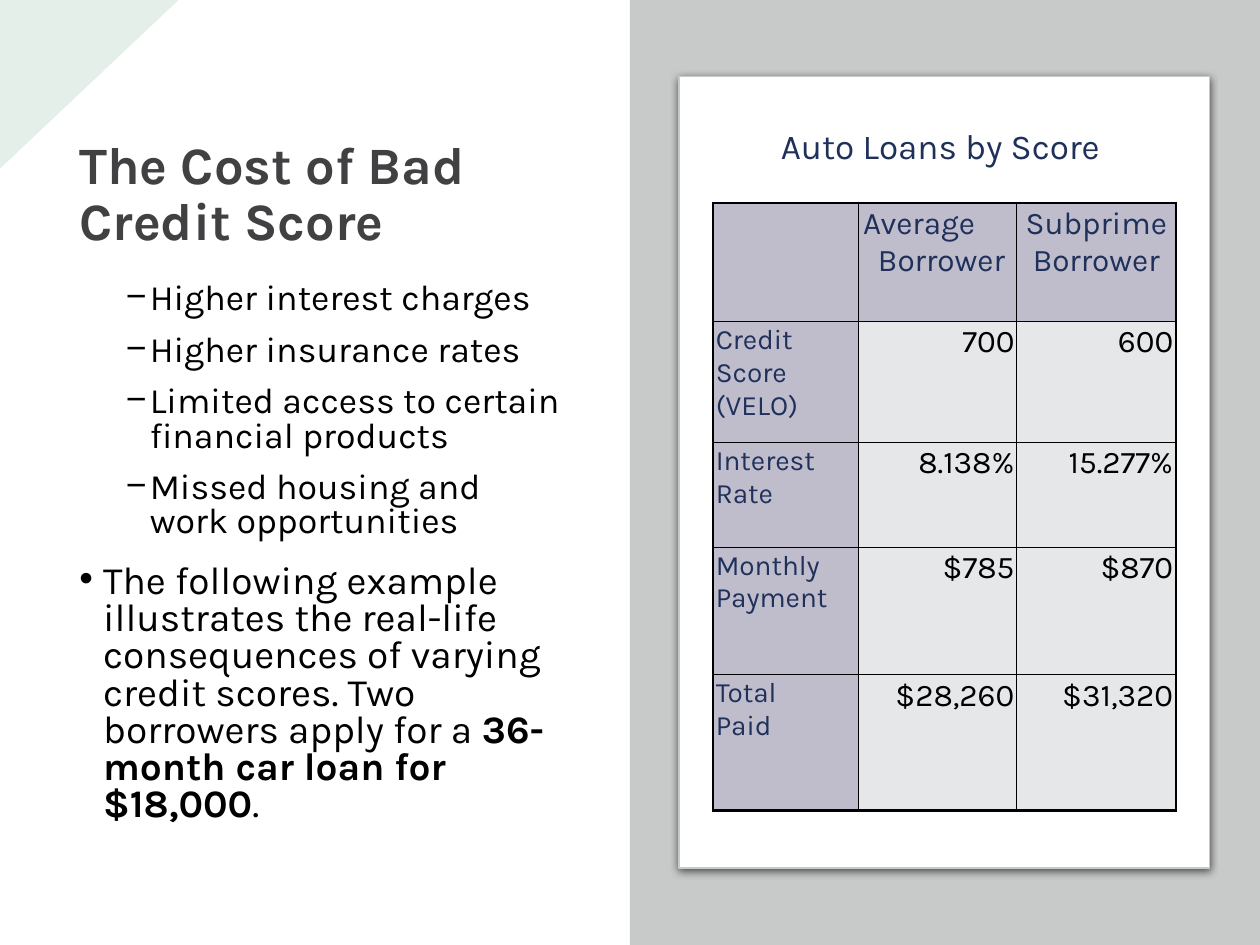
"""Build the slide on the cost of a bad credit score."""
import pptx
import pptx.util
import pptx.dml.color
import pptx.enum.shapes
import pptx.enum.text
import pptx.oxml
import pptx.oxml.ns

Cm, Pt = pptx.util.Cm, pptx.util.Pt
KIND = pptx.enum.shapes.MSO_SHAPE
SIDE = pptx.enum.text.PP_ALIGN
SPACE = pptx.oxml.ns.nsdecls("a")
NAVY, BLACK, GREY, LILAC, PALE = "1F305B", "000000", "C8CACA", "BFBDCB", "E6E7E8"

TITLE = "The Cost of Bad Credit Score"
COSTS = [
    "Higher interest charges",
    "Higher insurance rates",
    "Limited access to certain financial products",
    "Missed housing and work opportunities",
]
CASE = [
    ("The following example illustrates the real-life consequences of varying "
     "credit scores. Two borrowers apply for a ", False),
    ("36-month car loan for $18,000", True),
    (".", False),
]
LOANS = "Auto Loans by Score"
ROWS = [
    ("", "Average\nBorrower", "Subprime\nBorrower"),
    ("Credit Score (VELO)", "700", "600"),
    ("Interest Rate", "8.138%", "15.277%"),
    ("Monthly Payment", "$785", "$870"),
    ("Total\nPaid", "$28,260", "$31,320"),
]
WIDE = [2.92, 3.2, 3.2]
HIGH = [2.39, 2.44, 2.11, 2.57, 2.74]


def color(code):
    return pptx.dml.color.RGBColor.from_string(code)


def node(xml):
    return pptx.oxml.parse_xml(xml)


def write(para, text, size, code, bold=False):
    run = para.add_run()
    run.text = text
    font = run.font
    font.name, font.size, font.bold = "Karla", Pt(size), bold
    font.color.rgb = color(code)


def shape(kind, box, code):
    item = slide.shapes.add_shape(kind, *map(Cm, box))
    item.shadow.inherit = False
    item.fill.solid()
    item.fill.fore_color.rgb = color(code)
    item.line.fill.background()
    return item


def frame(box, wrap=True):
    text = slide.shapes.add_textbox(*map(Cm, box)).text_frame
    text.word_wrap = wrap
    return text


def bullet(para, mark, left, before):
    para.line_spacing = 0.8
    para.space_before, para.space_after = Pt(before), Pt(6)
    props = para._p.get_or_add_pPr()
    props.set("marL", str(Cm(left)))
    props.set("indent", str(Cm(-0.48)))
    props.append(node(f'<a:buFont {SPACE} typeface="Arial"/>'))
    props.append(node(f'<a:buChar {SPACE} char="{mark}"/>'))


def border(cell, row, col):
    edges = {"L": col == 0, "R": col == len(WIDE) - 1,
             "T": row == 0, "B": row == len(HIGH) - 1}
    props = cell._tc.get_or_add_tcPr()
    for edge, outer in edges.items():
        width = Pt(1.5 if outer else 0.75)
        props.append(node(
            f'<a:ln{edge} {SPACE} w="{width}"><a:solidFill>'
            f'<a:srgbClr val="{BLACK}"/></a:solidFill></a:ln{edge}>'))


def fill(cell, text, row, col):
    head = row == 0 or col == 0
    border(cell, row, col)
    cell.fill.solid()
    cell.fill.fore_color.rgb = color(LILAC if head else PALE)
    cell.margin_left = cell.margin_right = Cm(0.05)
    cell.margin_top = cell.margin_bottom = Cm(0.05)
    for spot, line in enumerate(text.split("\n") if text else []):
        body = cell.text_frame
        para = body.add_paragraph() if spot else body.paragraphs[0]
        para.alignment = (SIDE.LEFT if col == 0 or line == "Average"
                          else SIDE.CENTER if row == 0 else SIDE.RIGHT)
        if (row, col) == (0, 1):
            shift = Cm(0.16 if spot else 0.05)
            para._p.get_or_add_pPr().set("marL", str(shift))
        write(para, line, 18 if col else 16, NAVY if head else BLACK)


deck = pptx.Presentation()
deck.slide_width, deck.slide_height = Cm(25.4), Cm(19.05)
slide = deck.slides.add_slide(deck.slide_layouts[6])

corner = shape(KIND.RIGHT_TRIANGLE, (0.1, -0.1, 3.4, 3.6), "056839")
corner.rotation = 90
corner.fill._xPr.find(".//" + pptx.oxml.ns.qn("a:srgbClr")).append(
    node(f'<a:alpha {SPACE} val="10000"/>'))

title = frame((1.35, 0.71, 10.31, 4.5))
title.vertical_anchor = pptx.enum.text.MSO_ANCHOR.BOTTOM
title.paragraphs[0].line_spacing = 0.9
write(title.paragraphs[0], TITLE, 30, "414042", True)

body = frame((1.35, 5.59, 10.31, 11.38))
for spot, cost in enumerate(COSTS):
    para = body.add_paragraph() if spot else body.paragraphs[0]
    bullet(para, "−", 1.42, 3.8 if spot else 0)
    write(para, cost, 20.4, BLACK)
para = body.add_paragraph()
bullet(para, "•", 0.48, 7.5)
for text, bold in CASE:
    write(para, text, 22.2, BLACK, bold)

shape(KIND.RECTANGLE, (12.7, 0, 12.7, 19.05), GREY)
card = shape(KIND.ROUNDED_RECTANGLE, (13.69, 1.55, 10.69, 15.95), "FFFFFF")
card.adjustments[0] = 0
card.line.color.rgb = color(GREY)
card.line.width = Pt(0.75)
card._element.spPr.find(pptx.oxml.ns.qn("a:effectLst")).append(node(
    f'<a:outerShdw {SPACE} blurRad="{Pt(4.5)}" dist="{Pt(1.5)}" dir="5400000">'
    f'<a:srgbClr val="{BLACK}"><a:alpha val="63000"/></a:srgbClr></a:outerShdw>'))

place = map(Cm, (14.38, 4.09, sum(WIDE), sum(HIGH)))
table = slide.shapes.add_table(len(HIGH), len(WIDE), *place).table
table.first_row = table.horz_banding = False
for col, wide in enumerate(WIDE):
    table.columns[col].width = Cm(wide)
for row, line in enumerate(ROWS):
    table.rows[row].height = Cm(HIGH[row])
    for col, text in enumerate(line):
        fill(table.cell(row, col), text, row, col)

label = frame((15.49, 2.39, 7.11, 1.12), False)
write(label.paragraphs[0], LOANS, 20, NAVY)

deck.save("out.pptx")
